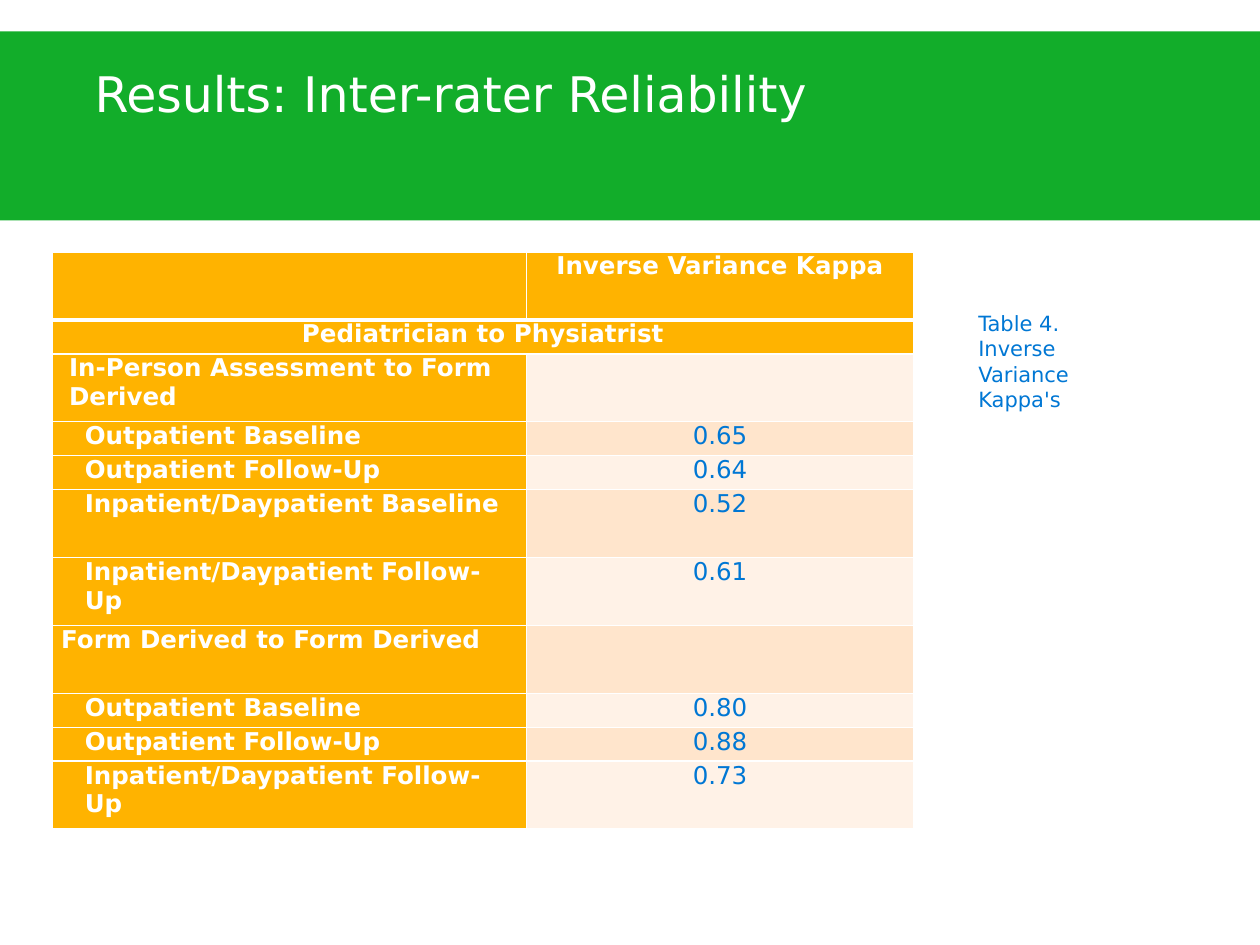
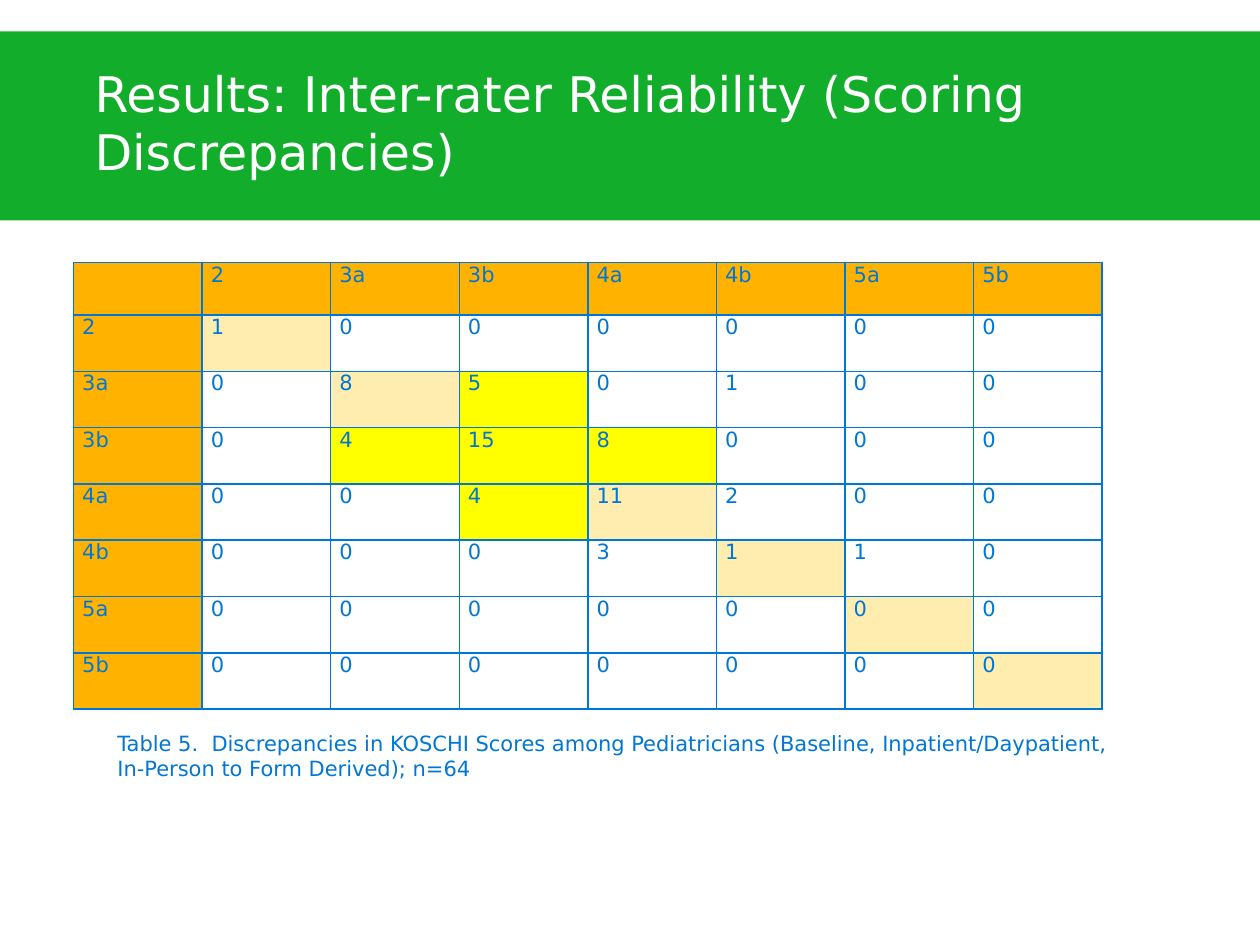
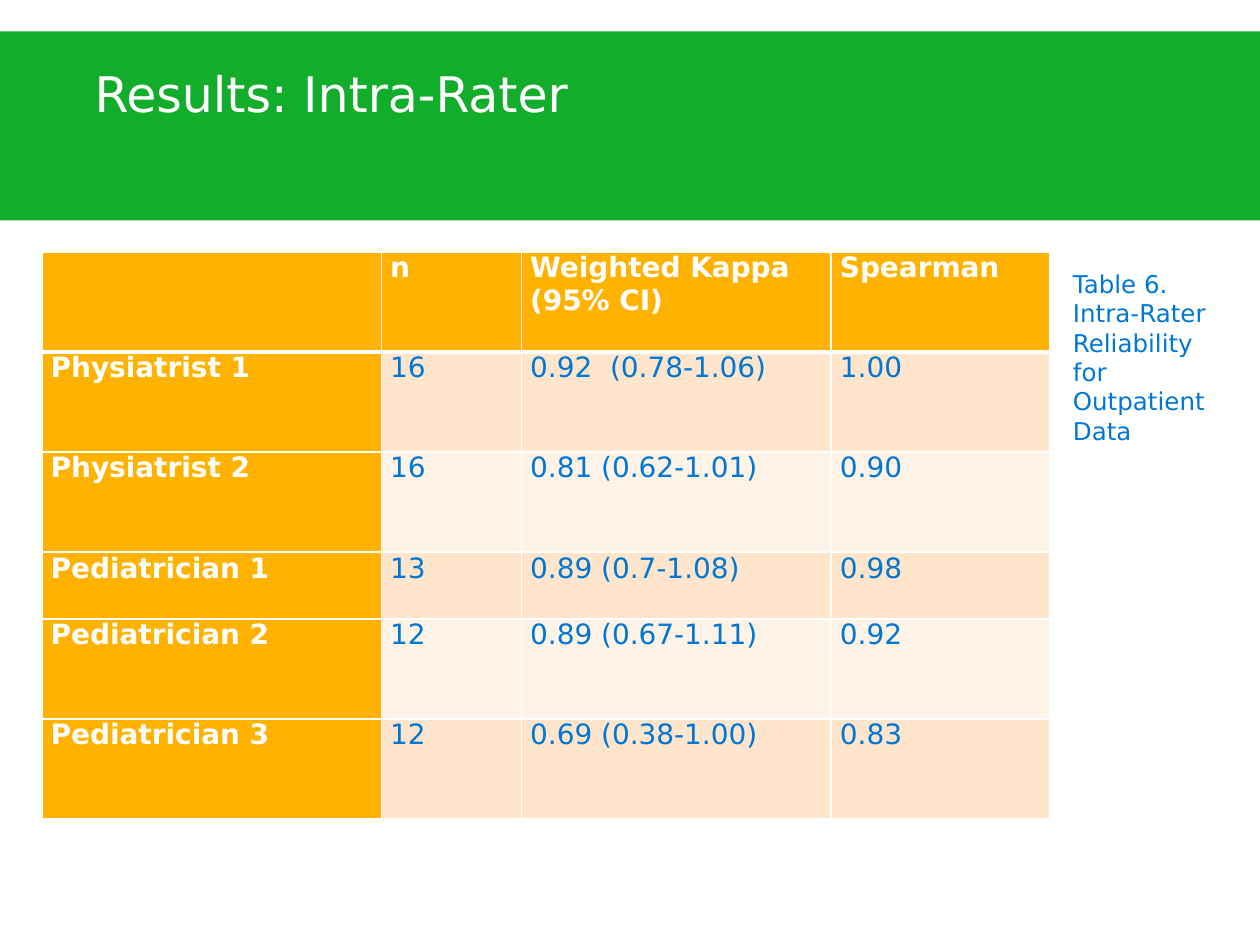
from lxml import etree
from pptx import Presentation
from pptx.dml.color import RGBColor
from pptx.enum.shapes import MSO_SHAPE
from pptx.enum.text import MSO_ANCHOR, MSO_AUTO_SIZE, PP_ALIGN
from pptx.oxml.ns import qn
from pptx.util import Pt

FONT = "DejaVu Sans"
GREEN = RGBColor(0x12, 0xAD, 0x2A)
AMBER = RGBColor(0xFF, 0xB3, 0x00)
PALE_AMBER = RGBColor(0xFF, 0xEC, 0xAF)
YELLOW = RGBColor(0xFF, 0xFF, 0x00)
PEACH = RGBColor(0xFF, 0xE5, 0xCC)
PALE_PEACH = RGBColor(0xFF, 0xF2, 0xE7)
BLUE = RGBColor(0x00, 0x77, 0xD4)
WHITE = RGBColor(0xFF, 0xFF, 0xFF)

CELL_INSET = 5
TITLE_BOX = (54, 36, 612, 90)
BAND_BOX = (0, 18, 720, 108)

KAPPA_ROWS = [
    ("", "Inverse Variance Kappa", 0, 2),
    ("Pediatrician to Physiatrist", "", 0, 1),
    ("In-Person Assessment to Form Derived", "", 4.5, 2),
    ("Outpatient Baseline", "0.65", 13.5, 1),
    ("Outpatient Follow-Up", "0.64", 13.5, 1),
    ("Inpatient/Daypatient Baseline", "0.52", 13.5, 2),
    ("Inpatient/Daypatient Follow-Up", "0.61", 13.5, 2),
    ("Form Derived to Form Derived", "", 0, 2),
    ("Outpatient Baseline", "0.80", 13.5, 1),
    ("Outpatient Follow-Up", "0.88", 13.5, 1),
    ("Inpatient/Daypatient Follow-Up", "0.73", 13.5, 2),
]

SCORES = ["2", "3a", "3b", "4a", "4b", "5a", "5b"]
SCORE_COUNTS = [
    [1, 0, 0, 0, 0, 0, 0],
    [0, 8, 5, 0, 1, 0, 0],
    [0, 4, 15, 8, 0, 0, 0],
    [0, 0, 4, 11, 2, 0, 0],
    [0, 0, 0, 3, 1, 1, 0],
    [0, 0, 0, 0, 0, 0, 0],
    [0, 0, 0, 0, 0, 0, 0],
]
FREQUENT = {(2, 3), (3, 2), (3, 3), (3, 4), (4, 3)}

INTRA_ROWS = [
    ["", "n", "Weighted Kappa (95% CI)", "Spearman"],
    ["Physiatrist 1", "16", "0.92  (0.78-1.06)", "1.00"],
    ["Physiatrist 2", "16", "0.81 (0.62-1.01)", "0.90"],
    ["Pediatrician 1", "13", "0.89 (0.7-1.08)", "0.98"],
    ["Pediatrician 2", "12", "0.89 (0.67-1.11)", "0.92"],
    ["Pediatrician 3", "12", "0.69 (0.38-1.00)", "0.83"],
]
INTRA_LINES = [3, 3, 3, 2, 3, 3]


def write(frame, text, size=12, color=BLUE, bold=False, align=PP_ALIGN.LEFT):
    """Put formatted text into a text frame."""
    paragraph = frame.paragraphs[0]
    paragraph.alignment = align
    run = paragraph.add_run()
    run.text = text
    run.font.name = FONT
    run.font.size = Pt(size)
    run.font.bold = bold
    run.font.color.rgb = color


def add_band(slide):
    """Place the green title band on the layout, behind every title."""
    layout = slide.slide_layout
    for footer in [p for p in layout.placeholders if p.placeholder_format.idx >= 10]:
        footer.element.getparent().remove(footer.element)
    band = slide.shapes.add_shape(MSO_SHAPE.RECTANGLE, *map(Pt, BAND_BOX))
    band.shadow.inherit = False
    band.fill.solid()
    band.fill.fore_color.rgb = GREEN
    band.line.fill.background()
    layout.shapes.element.insert(2, band.element)


def add_title(slide, text):
    """Move the title into the band and write it."""
    title = slide.shapes.title
    title.left, title.top, title.width, title.height = map(Pt, TITLE_BOX)
    frame = title.text_frame
    frame.margin_left = frame.margin_right = frame.margin_top = frame.margin_bottom = 0
    frame.vertical_anchor = MSO_ANCHOR.TOP
    frame.word_wrap = True
    frame.auto_size = MSO_AUTO_SIZE.NONE
    write(frame, text, size=28, color=WHITE)


def add_caption(slide, box, text, size=12, right_inset=7.2):
    """Write a table caption in the given box."""
    frame = slide.shapes.add_textbox(*map(Pt, box)).text_frame
    frame.word_wrap = True
    frame.auto_size = MSO_AUTO_SIZE.SHAPE_TO_FIT_TEXT
    frame.margin_right = Pt(right_inset)
    write(frame, text, size=size)


def set_borders(cell, color, top=1, bottom=1):
    """Draw the four borders of a cell."""
    properties = cell._tc.get_or_add_tcPr()
    for side, width in (("L", 1), ("R", 1), ("T", top), ("B", bottom)):
        line = etree.SubElement(properties, qn(f"a:ln{side}"), w=str(Pt(width)))
        fill = etree.SubElement(line, qn("a:solidFill"))
        etree.SubElement(fill, qn("a:srgbClr"), val=str(color))


def add_grid(slide, box, columns, heights, rows, look, border=WHITE, header_rule=3):
    """Build a table whose cells take fill, indent and text format from look(row, column)."""
    shape = slide.shapes.add_table(len(rows), len(columns), *map(Pt, box))
    grid = shape.table
    grid.first_row = grid.horz_banding = False
    for column, width in zip(grid.columns, columns):
        column.width = Pt(width)
    for r, (texts, height) in enumerate(zip(rows, heights)):
        grid.rows[r].height = Pt(height)
        for c, text in enumerate(texts):
            cell = grid.cell(r, c)
            style = look(r, c)
            fill = style.pop("fill")
            cell.margin_left = Pt(CELL_INSET + style.pop("indent", 0))
            cell.margin_right = Pt(CELL_INSET)
            cell.margin_top = cell.margin_bottom = 0
            set_borders(cell, border, top=header_rule if r == 1 else 1,
                        bottom=header_rule if r == 0 else 1)
            if fill is None:
                cell.fill.background()
            else:
                cell.fill.solid()
                cell.fill.fore_color.rgb = fill
            if text:
                write(cell.text_frame, text, **style)
    return grid


def banded_look(r, c, size, header_rows=1):
    """Give bold white heads on amber and blue values on alternating peach."""
    if r < header_rows or c == 0:
        return dict(fill=AMBER, size=size, color=WHITE, bold=True)
    return dict(fill=PEACH if r % 2 else PALE_PEACH, size=size)


def kappa_look(r, c):
    """Format the inverse variance table."""
    style = banded_look(r, c, 14, header_rows=2)
    if r < 2 or c == 1:
        style["align"] = PP_ALIGN.CENTER
    else:
        style["indent"] = KAPPA_ROWS[r][2]
    return style


def score_look(r, c):
    """Mark heads, agreements and frequent scores of the discrepancy table."""
    if r == 0 or c == 0:
        return dict(fill=AMBER)
    if (r, c) in FREQUENT:
        return dict(fill=YELLOW)
    return dict(fill=PALE_AMBER if r == c else None)


def split_height(total, lines):
    """Share a height among rows by their number of lines."""
    return [total * count / sum(lines) for count in lines]


def build_kappa(slide):
    """Fill the inter-rater reliability slide."""
    add_title(slide, "Results: Inter-rater Reliability")
    add_caption(slide, (552, 174, 108, 65.5), "Table 4. Inverse Variance Kappa's", right_inset=24)
    heights = split_height(330, [row[3] for row in KAPPA_ROWS])
    grid = add_grid(slide, (30, 144, 492, 330), [271, 221], heights,
                    [row[:2] for row in KAPPA_ROWS], kappa_look)
    grid.cell(1, 0).merge(grid.cell(1, 1))


def build_discrepancies(slide):
    """Fill the scoring discrepancies slide."""
    add_title(slide, "Results: Inter-rater Reliability (Scoring Discrepancies)")
    rows = [["", *SCORES]]
    rows += [[score, *map(str, counts)] for score, counts in zip(SCORES, SCORE_COUNTS)]
    add_grid(slide, (42, 150, 588, 255.4), [73.5] * 8, [30] + [32.2] * 7,
             rows, score_look, border=BLUE, header_rule=1)
    add_caption(slide, (60, 414, 582, 36),
                "Table 5.  Discrepancies in KOSCHI Scores among Pediatricians "
                "(Baseline, Inpatient/Daypatient, In-Person to Form Derived); n=64")


def build_intra_rater(slide):
    """Fill the intra-rater slide."""
    add_title(slide, "Results: Intra-Rater")
    add_grid(slide, (24, 144, 576, 324), [194, 80, 177, 125], split_height(324, INTRA_LINES),
             INTRA_ROWS, lambda r, c: banded_look(r, c, 16))
    add_caption(slide, (606, 150, 96, 109),
                "Table 6. Intra-Rater Reliability for Outpatient Data", size=14)


def main():
    """Build the three slides and save them."""
    deck = Presentation()
    deck.slide_width, deck.slide_height = Pt(720), Pt(540)
    title_only = deck.slide_layouts[5]
    builders = (build_kappa, build_discrepancies, build_intra_rater)
    slides = [deck.slides.add_slide(title_only) for _ in builders]
    add_band(slides[0])
    for build, slide in zip(builders, slides):
        build(slide)
    deck.save("out.pptx")


if __name__ == "__main__":
    main()
